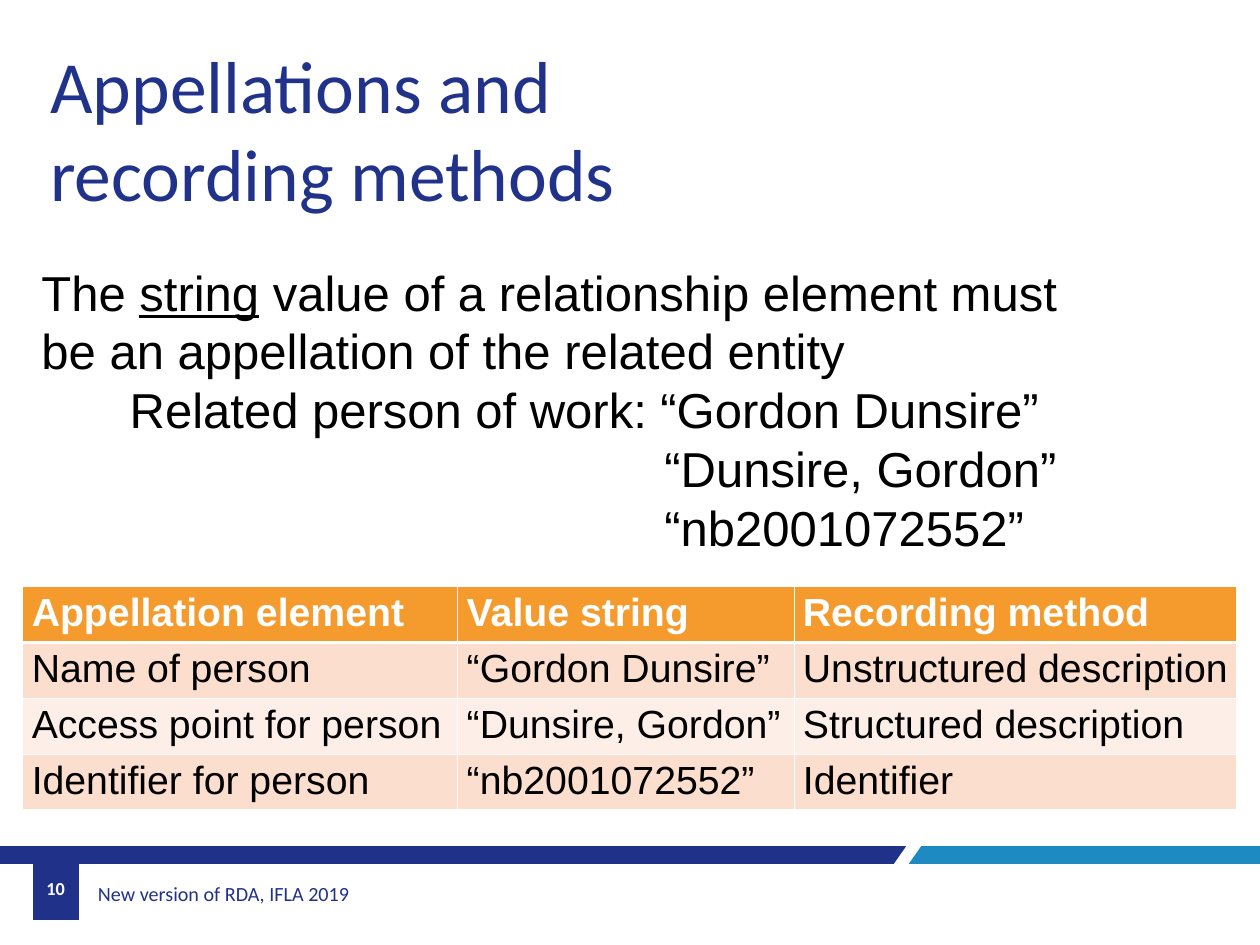
"""Build the slide on appellations and recording methods."""
from lxml import etree
from pptx import Presentation, util as u
from pptx.dml.color import RGBColor
from pptx.enum import text as t
from pptx.oxml.ns import qn

NAVY = RGBColor(0x20, 0x31, 0x89)
INK = RGBColor(0x21, 0x32, 0x8A)
BLUE = RGBColor(0x1D, 0x8B, 0xC1)
WHITE = RGBColor(255, 255, 255)
BLACK = RGBColor(0, 0, 0)
GOLD = RGBColor(0xF5, 0x9B, 0x2D)
BANDS = RGBColor(0xFB, 0xDE, 0xCD), RGBColor(0xFD, 0xEF, 0xE8)

WIDE, HIGH = 14.28, 10.71
TITLE = "Appellations and recording methods"
BODY = [
    (0, [("The ", False), ("string", True),
         (" value of a relationship element must be an appellation"
          " of the related entity", False)]),
    (1, [("Related person of work: “Gordon Dunsire”", False)]),
    (7.06, [("“Dunsire, Gordon”", False)]),
    (7.06, [("“nb2001072552”", False)]),
]
ROWS = [
    ("Appellation element", "Value string", "Recording method"),
    ("Name of person", "“Gordon Dunsire”", "Unstructured description"),
    ("Access point for person", "“Dunsire, Gordon”", "Structured description"),
    ("Identifier for person", "“nb2001072552”", "Identifier"),
]
COLS = 4.93, 3.81, 5.02
GRID = 0.26, 6.65, sum(COLS), 2.53
TOP, LOW, FOOT = 9.59, 9.79, 10.43
BADGE = 0.37, 0.89
SHAPES = [
    (NAVY, [(0, TOP), (10.27, TOP), (10.13, LOW), (0, LOW)]),
    (BLUE, [(10.44, TOP), (WIDE, TOP), (WIDE, LOW), (10.3, LOW)]),
    (NAVY, [(BADGE[0], TOP), (BADGE[1], TOP),
            (BADGE[1], FOOT), (BADGE[0], FOOT)]),
]
HEAD = dict(name="Calibri", size=u.Pt(60), color=INK, bold=False)
MAIN = dict(name="Arial", size=u.Pt(40), color=BLACK)
CELL = dict(name="Arial", size=u.Pt(32), color=BLACK, bold=False)
TOPS = dict(CELL, color=WHITE, bold=True)
NOTES = [
    ("New version of RDA, IFLA 2019", (1.04, 9.85, 4.02, 0.55), 0.07,
     t.PP_ALIGN.LEFT, dict(name="Calibri", size=u.Pt(16.4), color=NAVY)),
    ("10", (BADGE[0], LOW, BADGE[1] - BADGE[0], 0.55), 0.1,
     t.PP_ALIGN.CENTER,
     dict(name="Calibri", size=u.Pt(14.9), color=WHITE, bold=True)),
]


def style(font, form):
    for key, val in form.items():
        if key == "color":
            font.color.rgb = val
        else:
            setattr(font, key, val)


def place(shape, box):
    for key, val in zip(("left", "top", "width", "height"), box):
        setattr(shape, key, u.Inches(val))


def frame(shape, anchor, side=0.1):
    form = dict(word_wrap=True, auto_size=t.MSO_AUTO_SIZE.NONE,
                vertical_anchor=anchor,
                margin_left=u.Inches(side), margin_right=u.Inches(side),
                margin_top=u.Inches(side / 2), margin_bottom=u.Inches(side / 2))
    for key, val in form.items():
        setattr(shape.text_frame, key, val)
    return shape.text_frame


def edge(cell, side, width):
    line = etree.SubElement(cell._tc.get_or_add_tcPr(), qn("a:ln" + side),
                            w=str(u.Pt(width)))
    fill = etree.SubElement(line, qn("a:solidFill"))
    etree.SubElement(fill, qn("a:srgbClr"), val=str(WHITE))


def bars(slide):
    for color, points in SHAPES:
        start, *rest = [(u.Inches(x), u.Inches(y)) for x, y in points]
        form = slide.shapes.build_freeform(*start)
        form.add_line_segments(rest, close=True)
        bar = form.convert_to_shape()
        bar.shadow.inherit = False
        bar.fill.solid()
        bar.fill.fore_color.rgb = color
        bar.line.fill.background()
    for words, box, side, align, form in NOTES:
        note = slide.shapes.add_textbox(*map(u.Inches, box))
        para = frame(note, t.MSO_ANCHOR.MIDDLE, side).paragraphs[0]
        para.text, para.alignment = words, align
        style(para.runs[0].font, form)


def prose(slide):
    title, body = slide.placeholders
    place(title, (0.47, 0.4, 8.78, 2.12))
    para = frame(title, t.MSO_ANCHOR.TOP).paragraphs[0]
    para.text, para.alignment = TITLE, t.PP_ALIGN.LEFT
    style(para.runs[0].font, HEAD)
    place(body, (0.37, 2.92, 12.1, 3.47))
    text = frame(body, t.MSO_ANCHOR.TOP)
    for i, (dent, parts) in enumerate(BODY):
        para = text.add_paragraph() if i else text.paragraphs[0]
        para.space_before = u.Pt(0)
        para.line_spacing = u.Pt(48)
        prop = para._p.get_or_add_pPr()
        prop.set("marL", str(u.Inches(dent)))
        prop.set("indent", "0")
        etree.SubElement(prop, qn("a:buNone"))
        for words, under in parts:
            run = para.add_run()
            run.text = words
            style(run.font, dict(MAIN, underline=under))


def grid(slide):
    table = slide.shapes.add_table(len(ROWS), len(COLS),
                                   *map(u.Inches, GRID)).table
    for col, width in zip(table.columns, COLS):
        col.width = u.Inches(width)
    for r, row in enumerate(ROWS):
        table.rows[r].height = u.Inches(GRID[3] / len(ROWS))
        for c, words in enumerate(row):
            cell = table.cell(r, c)
            cell.margin_right = u.Inches(0.05)
            for side in "LRTB":
                edge(cell, side, 3 if (r, side) in ((0, "B"), (1, "T")) else 1)
            cell.fill.solid()
            cell.fill.fore_color.rgb = BANDS[(r - 1) % 2] if r else GOLD
            cell.text = words
            style(cell.text_frame.paragraphs[0].runs[0].font,
                  CELL if r else TOPS)


def main():
    deck = Presentation()
    deck.slide_width, deck.slide_height = u.Inches(WIDE), u.Inches(HIGH)
    slide = deck.slides.add_slide(deck.slide_layouts[1])
    bars(slide)
    prose(slide)
    grid(slide)
    deck.save("out.pptx")


if __name__ == "__main__":
    main()
